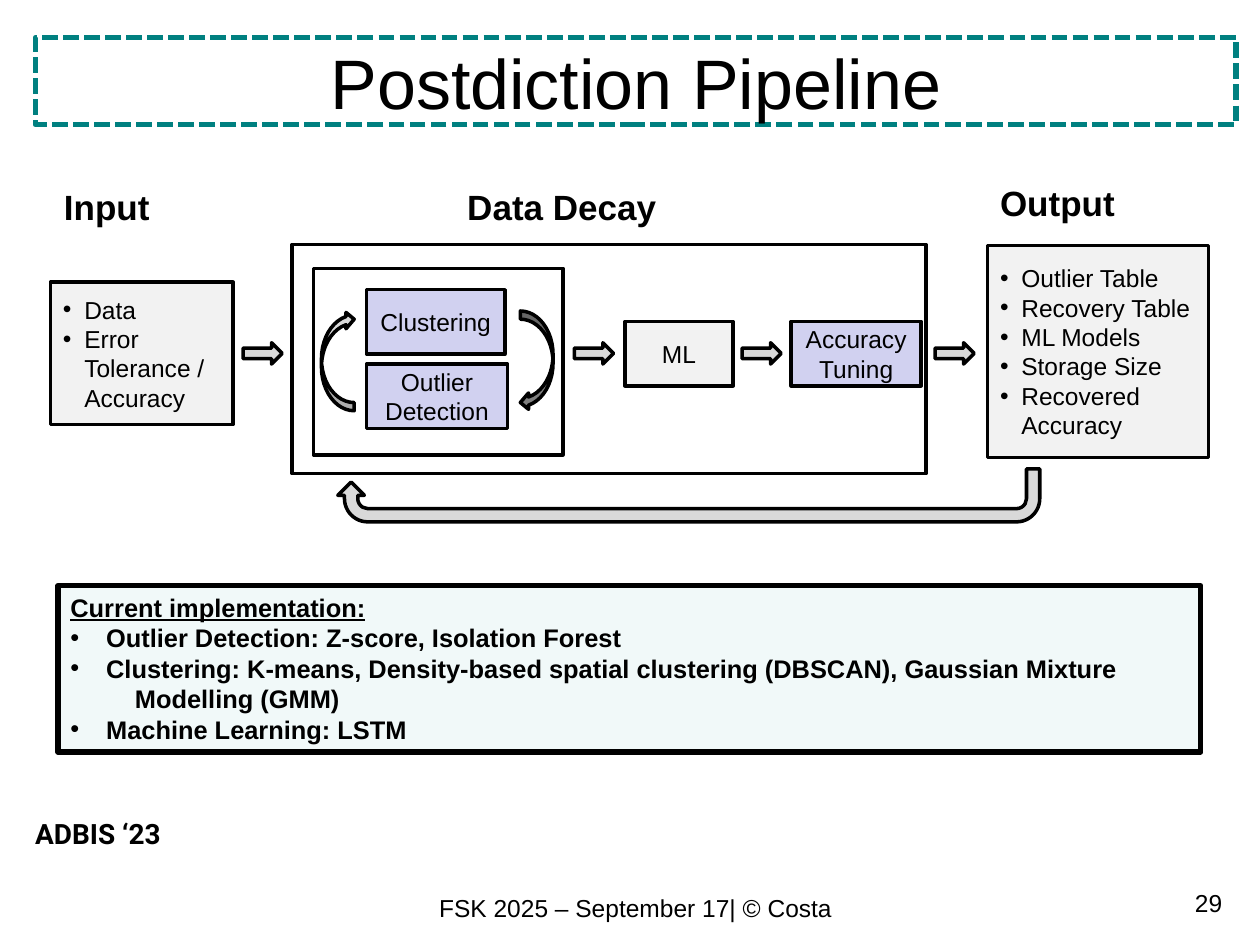
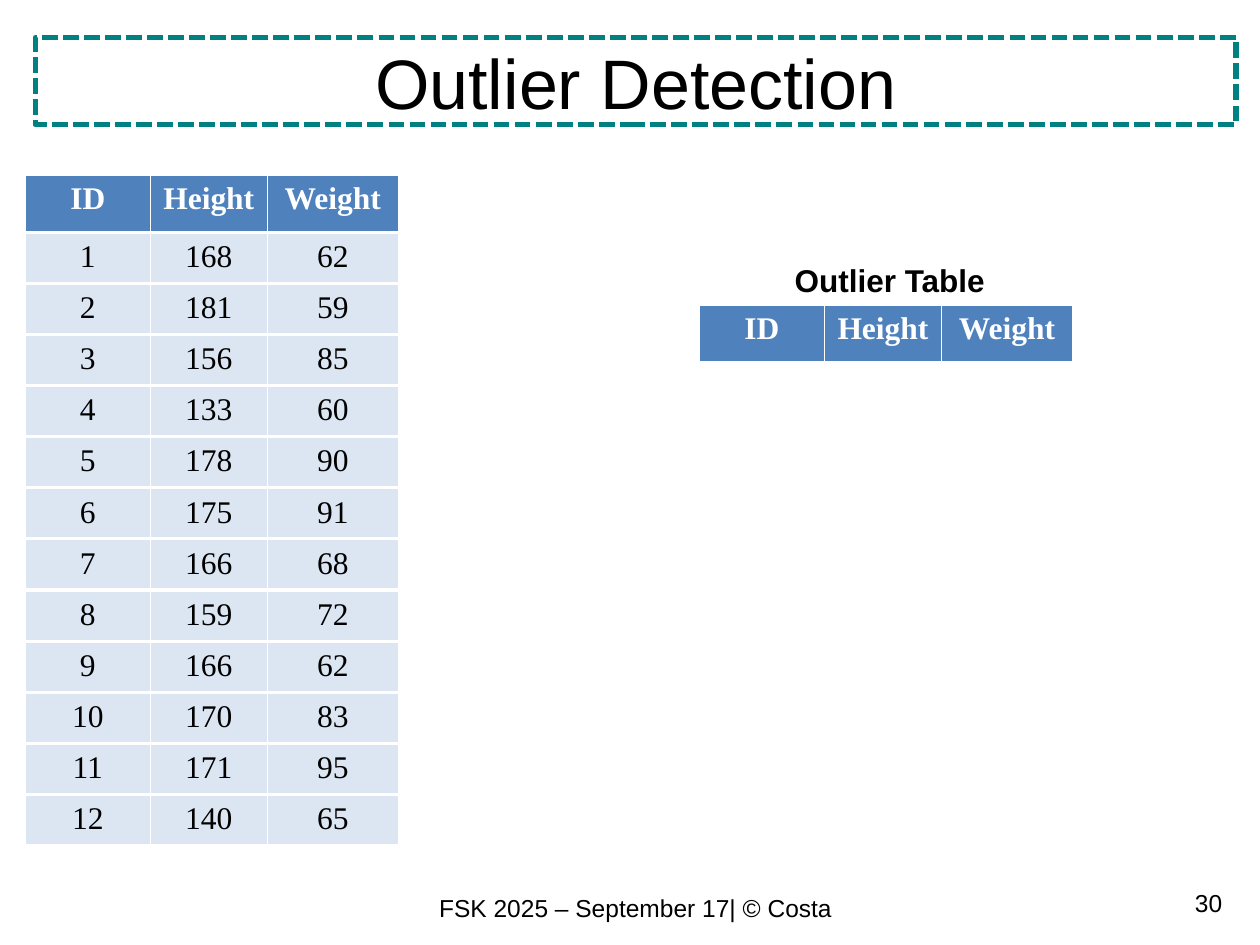
from copy import deepcopy
from dataclasses import dataclass

from pptx import Presentation
from pptx.dml.color import RGBColor
from pptx.enum.dml import MSO_LINE
from pptx.enum.shapes import MSO_SHAPE as Preset
from pptx.enum.text import MSO_ANCHOR as Anchor, PP_ALIGN as Align
from pptx.oxml.ns import qn
from pptx.util import Cm, Pt
from lxml.etree import SubElement


@dataclass(frozen=True)
class Theme:
    ink: str = "000000"
    white: str = "FFFFFF"
    teal: str = "008080"
    lilac: str = "D1D1F0"
    pale_gray: str = "F2F2F2"
    arrow_gray: str = "D9D9D9"
    dark_gray: str = "808080"
    mint: str = "F1F9F9"
    header_blue: str = "4F81BD"
    row_blue: str = "DCE6F2"
    sans: str = "Arial"
    serif: str = "Times New Roman"
    venue_font: str = "Roboto"
    title_size: float = 40
    heading_size: float = 20
    table_size: float = 18
    venue_size: float = 16
    note_size: float = 14.5
    body_size: float = 14


THEME = Theme()
COLUMN_WIDTHS = (2.52, 2.36, 2.64)
COLUMN_NAMES = ("ID", "Height", "Weight")
MEASUREMENTS = (
    (168, 62), (181, 59), (156, 85), (133, 60), (178, 90), (175, 91),
    (166, 68), (159, 72), (166, 62), (170, 83), (171, 95), (140, 65),
)


def rgb(value):
    return RGBColor.from_string(value)


def add_bullet(para, indent, tab=None):
    """Hang a bullet at the left edge, with an optional tab stop; lengths in cm."""
    props = para._p.get_or_add_pPr()
    props.set("marL", str(Cm(indent)))
    props.set("indent", str(-Cm(indent)))
    SubElement(props, qn("a:buFont"), typeface=THEME.sans)
    SubElement(props, qn("a:buChar"), char="•")
    if tab:
        stops = SubElement(props, qn("a:tabLst"))
        SubElement(stops, qn("a:tab"), pos=str(Cm(tab)), algn="l")


def format_para(para, size=THEME.body_size, font=THEME.sans, color=THEME.ink,
                bold=False, underline=False, align=Align.LEFT):
    para.alignment = align
    for span in para.runs:
        span.font.size = Pt(size)
        span.font.name = font
        span.font.bold = bold
        span.font.underline = underline
        span.font.color.rgb = rgb(color)
    for line_break in para._p.findall(qn("a:br")):
        line_break.append(deepcopy(para.runs[0].font._element))


def write_text(frame, text, anchor=Anchor.TOP, bullet=None, tab=None, heading=False, **style):
    """Write one paragraph per line; a heading line is underlined and has no bullet."""
    frame.word_wrap = True
    frame.vertical_anchor = anchor
    for index, line in enumerate(text.split("\n")):
        para = frame.add_paragraph() if index else frame.paragraphs[0]
        is_heading = heading and index == 0
        if bullet and not is_heading:
            add_bullet(para, bullet, tab)
        para.text = line
        format_para(para, underline=is_heading, **style)


def add_label(page, text, left, top, width, height, **style):
    box = page.shapes.add_textbox(Cm(left), Cm(top), Cm(width), Cm(height))
    write_text(box.text_frame, text, **style)


def add_outline(page, left, top, width, height, preset=Preset.RECTANGLE,
                fill=None, line=THEME.ink, weight=2):
    box = page.shapes.add_shape(preset, Cm(left), Cm(top), Cm(width), Cm(height))
    box.shadow.inherit = False
    if fill:
        box.fill.solid()
        box.fill.fore_color.rgb = rgb(fill)
    else:
        box.fill.background()
    box.line.color.rgb = rgb(line)
    box.line.width = Pt(weight)
    return box


def add_step(page, text, left, top, width, height=1.3, fill=THEME.lilac):
    box = add_outline(page, left, top, width, height, fill=fill)
    write_text(box.text_frame, text, anchor=Anchor.MIDDLE, align=Align.CENTER)


def add_list_box(page, text, left, top, width, height):
    box = add_outline(page, left, top, width, height, fill=THEME.pale_gray)
    write_text(box.text_frame, text, anchor=Anchor.MIDDLE, bullet=0.43)


def add_arrow(page, preset, left, top, width, height, fill=THEME.arrow_gray, rotation=0):
    arrow = add_outline(page, left, top, width, height, preset=preset, fill=fill)
    arrow.rotation = rotation


def add_cell_borders(cell):
    props = cell._tc.get_or_add_tcPr()
    for side, weight in (("L", 1), ("R", 1), ("T", 1), ("B", 3)):
        border = SubElement(props, qn(f"a:ln{side}"), w=str(Pt(weight)))
        fill = SubElement(border, qn("a:solidFill"))
        SubElement(fill, qn("a:srgbClr"), val=THEME.white)


def add_table_row(page, values, left, top, height, fill, **style):
    """Add a table of a single row, so that rows can be moved one by one."""
    table = page.shapes.add_table(1, len(values), Cm(left), Cm(top),
                                  Cm(sum(COLUMN_WIDTHS)), Cm(height)).table
    table.first_row = table.horz_banding = False
    for column, width in zip(table.columns, COLUMN_WIDTHS):
        column.width = Cm(width)
    for cell, value in zip(table.rows[0].cells, values):
        add_cell_borders(cell)
        cell.fill.solid()
        cell.fill.fore_color.rgb = rgb(fill)
        write_text(cell.text_frame, str(value), size=THEME.table_size,
                   font=THEME.serif, align=Align.CENTER, **style)


def add_header_row(page, left, top):
    add_table_row(page, COLUMN_NAMES, left, top, 1.17, THEME.header_blue,
                  color=THEME.white, bold=True)


def add_page(deck, title, number):
    page = deck.slides.add_slide(deck.slide_layouts[6])
    add_label(page, "FSK 2025 – September 17| © Costa", 0.71, 17.88, 24.21, 0.86,
              align=Align.CENTER)
    band = add_outline(page, 0.71, 0.76, 24.21, 1.75, line=THEME.teal, weight=3)
    band.line.dash_style = MSO_LINE.SQUARE_DOT
    write_text(band.text_frame, title, anchor=Anchor.MIDDLE, size=THEME.title_size,
               align=Align.CENTER)
    add_label(page, str(number), 21.89, 17.78, 3, 1.02, align=Align.RIGHT)
    return page


def add_decay_stage(page):
    add_outline(page, 5.89, 4.93, 12.78, 4.62)
    add_outline(page, 6.32, 5.41, 5.03, 3.76)
    add_step(page, "Clustering", 7.39, 5.84, 2.79)
    add_step(page, "Outlier Detection", 7.39, 7.34, 2.84)
    add_arrow(page, Preset.CURVED_LEFT_ARROW, 10.49, 6.27, 0.66, 2.01, fill=THEME.dark_gray)
    add_arrow(page, Preset.CURVED_LEFT_ARROW, 6.48, 6.27, 0.66, 2.01, rotation=180)
    add_step(page, "ML", 12.6, 6.48, 2.18, fill=THEME.pale_gray)
    add_step(page, "Accuracy Tuning", 15.95, 6.48, 2.62)


def add_implementation_note(page):
    note = add_outline(page, 1.17, 11.81, 23.04, 3.35, fill=THEME.mint, weight=3)
    lines = (
        "Current implementation:",
        "Outlier Detection: Z-score, Isolation Forest",
        "Clustering: K-means, Density-based spatial clustering (DBSCAN), "
        "Gaussian Mixture\v\tModelling (GMM)",
        "Machine Learning: LSTM",
    )
    write_text(note.text_frame, "\n".join(lines), bullet=0.72, tab=1.3, heading=True,
               size=THEME.note_size, bold=True)


def add_pipeline_page(deck):
    page = add_page(deck, "Postdiction Pipeline", 29)
    for text, left, top, width in (("Input", 1.04, 3.61, 3.73),
                                   ("Data Decay", 9.17, 3.61, 8.97),
                                   ("Output", 19.91, 3.53, 4.45)):
        add_label(page, text, left, top, width, 1.12, size=THEME.heading_size, bold=True)
    add_list_box(page, "Data\nError Tolerance / Accuracy", 1.02, 5.69, 3.68, 2.87)
    add_decay_stage(page)
    add_list_box(page, "Outlier Table\nRecovery Table\nML Models\nStorage Size\n"
                 "Recovered Accuracy", 19.91, 4.95, 4.45, 4.27)
    for left in (4.9, 11.58, 14.96, 18.85):
        add_arrow(page, Preset.RIGHT_ARROW, left, 6.91, 0.79, 0.43)
    add_arrow(page, Preset.U_TURN_ARROW, 6.81, 9.45, 14.15, 1.07, rotation=180)
    add_implementation_note(page)
    add_label(page, "ADBIS ‘23", 0.46, 16.33, 5.64, 0.94, size=THEME.venue_size,
              font=THEME.venue_font, bold=True)


def add_outlier_page(deck):
    page = add_page(deck, "Outlier Detection", 30)
    row_height = 1.03
    add_header_row(page, 0.51, 3.53)
    for index, measurement in enumerate(MEASUREMENTS):
        add_table_row(page, (index + 1, *measurement), 0.51, 4.7 + index * row_height,
                      row_height, THEME.row_blue)
    add_header_row(page, 14.1, 6.15)
    add_label(page, "Outlier Table", 15.77, 5.13, 4.88, 1.02, size=THEME.table_size, bold=True)


def main():
    deck = Presentation()
    deck.slide_width, deck.slide_height = Cm(25.4), Cm(19.05)
    add_pipeline_page(deck)
    add_outlier_page(deck)
    deck.save("out.pptx")


if __name__ == "__main__":
    main()
